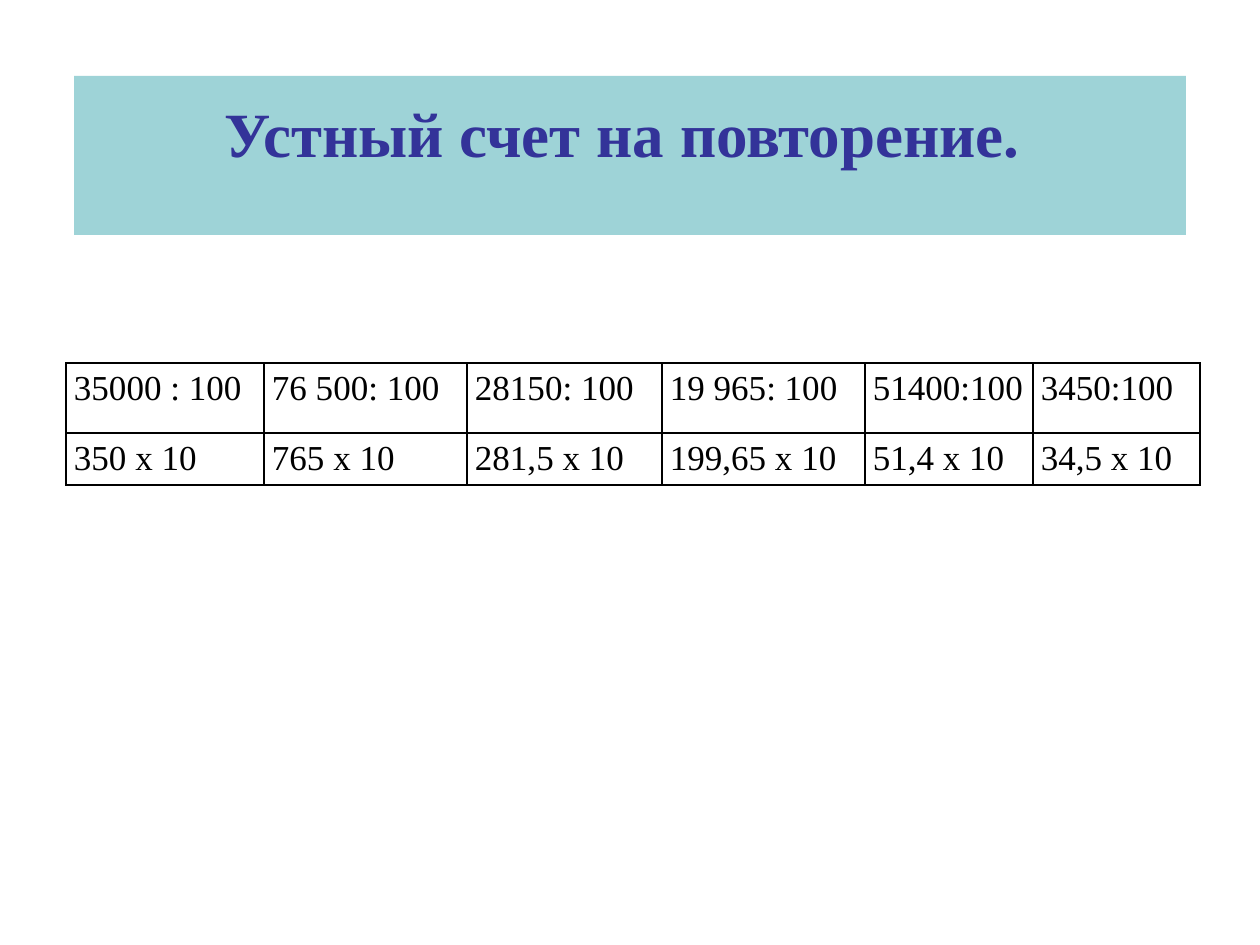
from lxml.etree import SubElement
from pptx import Presentation
from pptx.dml.color import RGBColor
from pptx.enum.text import MSO_ANCHOR, MSO_AUTO_SIZE, PP_ALIGN
from pptx.oxml.ns import qn
from pptx.util import Emu, Pt

COLORS = {"banner": "9ED3D7", "heading": "333399", "ink": "000000"}
FONT = "Times New Roman"
DIVISIONS = ["35000 : 100", "76\u00a0500: 100", "28150: 100",
             "19\u00a0965: 100", "51400:100", "3450:100"]
PRODUCTS = ["350 х 10", "765 х 10", "281,5 х 10",
            "199,65 х 10", "51,4 х 10", "34,5 х 10"]
COLUMN_WIDTHS = [198, 203, 195, 203, 168, 167]
ROW_HEIGHTS = [70, 52]


def px(length):
    return Emu(round(length * 914400 / 126))


def write(frame, text, size, color, bold=False, align=PP_ALIGN.LEFT, spacing=1.0):
    paragraph = frame.paragraphs[0]
    paragraph.alignment = align
    paragraph.line_spacing = spacing
    run = paragraph.add_run()
    run.text = text
    run.font.name = FONT
    run.font.size = Pt(size)
    run.font.bold = bold
    run.font.color.rgb = RGBColor.from_string(COLORS[color])


def set_borders(cell, color, width):
    properties = cell._tc.get_or_add_tcPr()
    for position, side in enumerate(("lnL", "lnR", "lnT", "lnB")):
        line = properties.makeelement(qn(f"a:{side}"), {"w": str(Pt(width))})
        fill = SubElement(line, qn("a:solidFill"))
        SubElement(fill, qn("a:srgbClr"), val=COLORS[color])
        properties.insert(position, line)


def add_banner(slide, left, top, width, height):
    title = slide.shapes.title
    title.left, title.top = px(left), px(top)
    title.width, title.height = px(width), px(height)
    title.fill.solid()
    title.fill.fore_color.rgb = RGBColor.from_string(COLORS["banner"])
    frame = title.text_frame
    frame.word_wrap = True
    frame.auto_size = MSO_AUTO_SIZE.NONE
    frame.vertical_anchor = MSO_ANCHOR.TOP
    frame.margin_top = px(19)
    frame.margin_left, frame.margin_right = px(12), px(28)
    write(frame, "Устный счет на повторение.", 36, "heading",
          bold=True, align=PP_ALIGN.CENTER)


def add_exercises(slide, left, top, column_widths, row_heights):
    rows = [DIVISIONS, PRODUCTS]
    table = slide.shapes.add_table(
        len(rows), len(column_widths), px(left), px(top),
        px(sum(column_widths)), px(sum(row_heights))).table
    table.first_row = table.horz_banding = False
    for column, width in zip(table.columns, column_widths):
        column.width = px(width)
    for row, height, exercises in zip(table.rows, row_heights, rows):
        row.height = px(height)
        for cell, exercise in zip(row.cells, exercises):
            cell.fill.background()
            cell.margin_left = cell.margin_right = px(8)
            cell.margin_top = cell.margin_bottom = 0
            set_borders(cell, "ink", 1)
            write(cell.text_frame, exercise, 20, "ink",
                  align=PP_ALIGN.JUSTIFY, spacing=1.15)


def main():
    deck = Presentation()
    deck.slide_width, deck.slide_height = px(1260), px(945)
    slide = deck.slides.add_slide(deck.slide_layouts[5])
    add_banner(slide, 74, 76, 1112, 159)
    add_exercises(slide, 66, 363, COLUMN_WIDTHS, ROW_HEIGHTS)
    deck.save("out.pptx")


if __name__ == "__main__":
    main()
